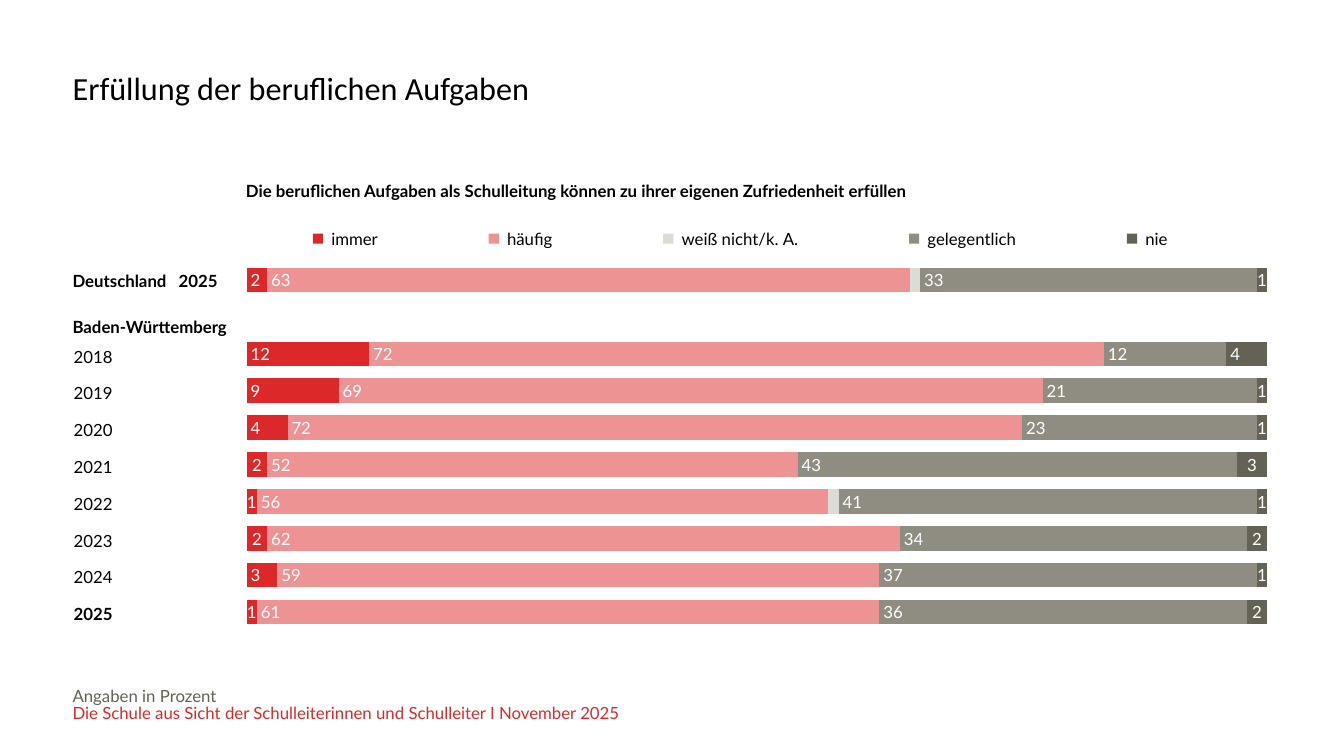
import pptx
import pptx.chart.data
import pptx.dml.color
import pptx.enum.chart
import pptx.enum.text
import pptx.oxml.ns
import pptx.util
from dataclasses import dataclass
from typing import NamedTuple

DECK = pptx.Presentation()
DECK.slide_width = pptx.util.Inches(13.33)
DECK.slide_height = pptx.util.Inches(7.5)
COL = DECK.slide_width / 100
ROW = DECK.slide_height / 100
LEFT = 5.4
BLACK, WHITE, RED, GREY = "000000", "FFFFFF", "DC2828", "636255"
ANCHOR = pptx.enum.text.MSO_ANCHOR
PLACE = pptx.enum.chart.XL_LABEL_POSITION

class Box(NamedTuple):
    x: float
    y: float
    w: float
    h: float

    def emu(self) -> list[int]:
        return [round(val * unit) for val, unit in zip(self, (COL, ROW) * 2)]

@dataclass
class Label:
    box: Box
    lines: list[str]
    bold: str
    cols: tuple[float, ...] = (1,)
    space: float = 0.85
    anchor: ANCHOR = ANCHOR.BOTTOM
    tab: float = 0

@dataclass
class Band:
    name: str
    fill: str
    vals: list[int | None]
    place: PLACE | None = None
    odd: tuple[int, ...] = ()
    other: PLACE | None = None

TITLE = Box(LEFT, 9.6, 91.6, 12.13)
FOOT = Box(LEFT, 91.07, 73.6, 5.33)
CHART = Box(10.35, 26.93, 85.22, 62)
YEARS = [str(year) for year in range(2018, 2026)]
LABELS = [
    Label(Box(18.3, 23.6, 62.79, 2.93),
          ["Die beruflichen Aufgaben als Schulleitung können zu ihrer eigenen Zufriedenheit erfüllen"],
          "Die"),
    Label(Box(5.48, 44.53, 14.4, 38.93), YEARS, "2025",
          (0.67, 0.33), 1.15, ANCHOR.MIDDLE),
    Label(Box(LEFT, 35.6, 20.1, 2.93), ["Deutschland\t2025"], "Deutsch", tab=7.9),
    Label(Box(LEFT, 41.6, 15.6, 2.93), ["Baden-Württemberg"], "Baden"),
]
BANDS = [
    Band("immer", RED, [2, None, 12, 9, 4, 2, 1, 2, 3, 1],
         PLACE.INSIDE_BASE, (5, 6, 7, 9), PLACE.CENTER),
    Band("häufig", "ED9393", [63, None, 72, 69, 72, 52, 56, 62, 59, 61],
         PLACE.INSIDE_BASE),
    Band("weiß nicht/k. A.", "DCDBD5", [1] + [None] * 5 + [1] + [None] * 3),
    Band("gelegentlich", "8F8D81", [33, None, 12, 21, 23, 43, 41, 34, 37, 36],
         PLACE.INSIDE_BASE),
    Band("nie", GREY, [1, None, 4, 1, 1, 3, 1, 2, 1, 2],
         PLACE.CENTER, (2,), PLACE.INSIDE_BASE),
]

def paint(target, tone: str) -> None:
    target.rgb = pptx.dml.color.RGBColor.from_string(tone)

def style(font, tone: str, size: float = 12, face: str = "Lato",
          bold: bool = False) -> None:
    font.size, font.name, font.bold = pptx.util.Pt(size), face, bold
    paint(font.color, tone)

def clear(frame) -> None:
    frame.margin_left = frame.margin_right = 0
    frame.margin_top = frame.margin_bottom = 0

def node(tag: str, inner: str = "", attrs: str = ""):
    return pptx.oxml.parse_xml(
        f"<{tag} {pptx.oxml.ns.nsdecls(tag[0])} {attrs}>{inner}</{tag}>")

def layout(parent, index: int, box: Box, inner: str = "") -> None:
    for old in parent.findall(pptx.oxml.ns.qn("c:layout")):
        parent.remove(old)
    parts = inner + '<c:xMode val="edge"/><c:yMode val="edge"/>'
    parts += "".join(f'<c:{key} val="{val}"/>' for key, val in zip("xywh", box))
    parent.insert(index, node("c:layout", f"<c:manualLayout>{parts}</c:manualLayout>"))

def write(shape, lines: dict[str, str], space: float, size: float, face: str) -> None:
    frame = shape.text_frame
    frame.text = "\n".join(lines)
    frame.word_wrap = True
    clear(frame)
    frame.vertical_anchor = ANCHOR.TOP
    frame.auto_size = pptx.enum.text.MSO_AUTO_SIZE.NONE
    for par, tone in zip(frame.paragraphs, lines.values()):
        par.alignment = pptx.enum.text.PP_ALIGN.LEFT
        par.line_spacing = space
        style(par.font, tone, size, face)

def add_label(slide, label: Label) -> None:
    box = label.box.emu()
    table = slide.shapes.add_table(len(label.lines), len(label.cols), *box).table
    table.first_row = table.horz_banding = False
    for col, share in zip(table.columns, label.cols):
        col.width = round(box[2] * share)
    for cell in table.iter_cells():
        cell.fill.background()
        clear(cell)
        cell.vertical_anchor = label.anchor
        for index, side in enumerate("LRTB"):
            edge = node(f"a:ln{side}", "<a:noFill/>", 'w="0"')
            cell._tc.get_or_add_tcPr().insert(index, edge)
    for row, line in enumerate(label.lines):
        cell = table.cell(row, 0)
        cell.text = line
        par = cell.text_frame.paragraphs[0]
        if label.tab:
            stop = f'<a:tab pos="{round(label.tab * COL)}" algn="l"/>'
            par._p.get_or_add_pPr().append(node("a:tabLst", stop))
        par.line_spacing = label.space
        style(par.font, BLACK, bold=line.startswith(label.bold))

def add_band(series, band: Band) -> None:
    series.format.fill.solid()
    paint(series.format.fill.fore_color, band.fill)
    if band.place is None:
        return
    marks = series.data_labels
    marks.show_value = True
    marks.position = band.place
    style(marks.font, WHITE)
    for index in band.odd:
        mark = series.points[index].data_label
        style(mark.font, WHITE)
        mark.position = band.other

def add_chart(slide) -> None:
    data = pptx.chart.data.CategoryChartData()
    data.categories = [str(num) for num in range(1, 11)]
    for band in BANDS:
        data.add_series(f" {band.name}", band.vals)
    kind = pptx.enum.chart.XL_CHART_TYPE.BAR_STACKED
    chart = slide.shapes.add_chart(kind, *CHART.emu(), data).chart
    chart.has_title = False
    style(chart.font, BLACK)
    plot = chart.plots[0]
    plot.gap_width, plot.overlap = 50, 100
    plot.vary_by_categories = False
    for series, band in zip(plot.series, BANDS):
        add_band(series, band)
    chart.category_axis.reverse_order = True
    chart.category_axis.visible = False
    axis = chart.value_axis
    axis.minimum_scale, axis.maximum_scale, axis.major_unit = 0, 100, 20
    axis.has_major_gridlines = axis.visible = False
    chart.has_legend = True
    legend = chart.legend
    legend.position = pptx.enum.chart.XL_LEGEND_POSITION.TOP
    legend.include_in_layout = False
    style(legend.font, BLACK)
    layout(legend._element, 1, Box(0.06, 0.04, 0.93, 0.07))
    layout(chart._chartSpace.chart.plotArea, 0, Box(0.094, 0.124, 0.891, 0.787),
           '<c:layoutTarget val="inner"/>')

def main() -> None:
    slide = DECK.slides.add_slide(DECK.slide_layouts[5])
    title = slide.shapes.title
    title.left, title.top, title.width, title.height = TITLE.emu()
    write(title, {"Erfüllung der beruflichen Aufgaben": BLACK}, 0.9, 23, "Calibri")
    foot = {"Angaben in Prozent": GREY,
            "Die Schule aus Sicht der Schulleiterinnen und Schulleiter I November 2025": RED}
    write(slide.shapes.add_textbox(*FOOT.emu()), foot, 0.85, 12, "Lato")
    add_chart(slide)
    for label in LABELS:
        add_label(slide, label)
    DECK.save("out.pptx")

if __name__ == "__main__":
    main()
